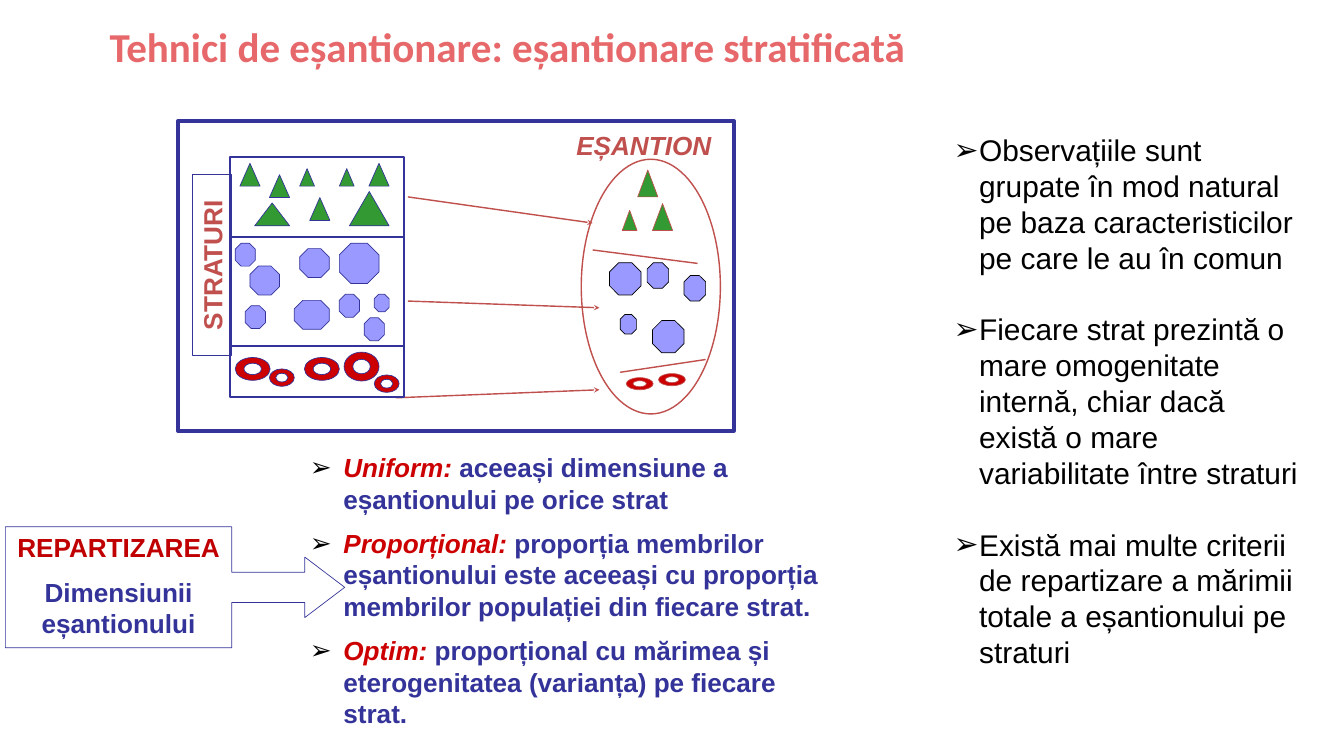
from lxml.etree import SubElement
from pptx import Presentation
from pptx.dml.color import RGBColor
from pptx.enum.shapes import MSO_CONNECTOR as Link, MSO_SHAPE as Kind
from pptx.enum.text import MSO_ANCHOR as Anchor, MSO_AUTO_SIZE as Auto, PP_ALIGN as Align
from pptx.oxml.ns import qn
from pptx.util import Inches, Pt

NAVY = RGBColor(0x33, 0x33, 0x99)
BRICK = RGBColor(0xC0, 0x50, 0x4D)
RED = RGBColor(0xCC, 0x00, 0x00)
DARK = RGBColor(0xC0, 0x00, 0x00)
GREEN = RGBColor(0x33, 0x99, 0x33)
LILAC = RGBColor(0x99, 0x99, 0xFF)
CORAL = RGBColor(0xE7, 0x68, 0x6A)
BLACK = RGBColor(0, 0, 0)

WIDE = (0.15, 0.07)  # side and top margins of the roomy text boxes
SLIM = (0.1, 0.05)
BEND = 0.55  # control length of a quarter arc

# Members of each stratum: left, top, width, height
TREES = [(3.57, 2.43, 0.3, 0.34), (4.01, 2.6, 0.3, 0.34), (3.79, 3.02, 0.52, 0.34),
         (5.49, 2.43, 0.3, 0.34), (4.61, 2.94, 0.3, 0.34), (4.46, 2.51, 0.22, 0.26),
         (5.2, 2.85, 0.59, 0.51), (5.05, 2.51, 0.22, 0.26)]
BLOCKS = [(3.72, 3.96, 0.44, 0.43), (4.38, 4.47, 0.52, 0.43), (4.46, 3.7, 0.44, 0.43),
          (5.42, 4.73, 0.3, 0.34), (5.05, 4.38, 0.3, 0.34), (5.57, 4.38, 0.22, 0.26),
          (5.05, 3.62, 0.59, 0.6), (3.5, 3.62, 0.3, 0.34), (3.65, 4.55, 0.3, 0.34)]
RINGS = [(3.5, 5.32, 0.52, 0.34), (4.01, 5.49, 0.37, 0.26), (5.57, 5.58, 0.37, 0.26),
         (4.53, 5.32, 0.52, 0.34), (5.12, 5.24, 0.52, 0.43)]

# Members drawn into the sample
PICKED_TREES = [(9.71, 3.03, 0.3, 0.4), (9.26, 3.13, 0.22, 0.3), (9.49, 2.53, 0.3, 0.4)]
PICKED_BLOCKS = [(9.07, 3.91, 0.47, 0.48), (9.63, 3.91, 0.32, 0.38), (9.23, 4.68, 0.24, 0.29),
                 (10.18, 4.1, 0.32, 0.38), (9.71, 4.77, 0.47, 0.48)]
PICKED_RINGS = [(9.32, 5.62, 0.4, 0.18), (9.8, 5.56, 0.4, 0.18)]

METHODS = [
    ("Uniform: ", "aceeași dimensiune a eșantionului pe orice strat"),
    ("Proporțional: ", "proporția membrilor eșantionului este aceeași cu proporția "
                       "membrilor populației din fiecare strat."),
    ("Optim: ", "proporțional cu mărimea și eterogenitatea (varianța) pe fiecare strat."),
]
NOTES = [
    "Observațiile sunt grupate în mod natural pe baza caracteristicilor pe care le au în comun",
    "Fiecare strat prezintă o mare omogenitate internă, chiar dacă există o mare "
    "variabilitate între straturi",
    "Există mai multe criterii de repartizare a mărimii totale a eșantionului pe straturi",
]


def paint(shape, fill, line, width):
    shape.shadow.inherit = False
    if fill is None:
        shape.fill.background()
    else:
        shape.fill.solid()
        shape.fill.fore_color.rgb = fill
    shape.line.color.rgb = line
    shape.line.width = Pt(width)
    return shape


def add_form(slide, kind, box, fill, line, width=0.75):
    shape = slide.shapes.add_shape(kind, *map(Inches, box))
    return paint(shape, fill, line, width)


def curve(shape):
    """Turn each three straight segments into one Bezier arc."""
    steps = list(shape._element.iter(qn("a:lnTo")))
    for arc, *rest in zip(steps[::3], steps[1::3], steps[2::3]):
        bend = arc.makeelement(qn("a:cubicBezTo"))
        arc.addprevious(bend)
        for step in (arc, *rest):
            bend.append(step[0])
            step.getparent().remove(step)


def add_ring(slide, box, line):
    """Oval ring whose hole is half as wide and half as high."""
    left, top, width, height = box

    def oval(part):
        spots = [(-1, 0)]
        for x, y in ((-1, 0), (0, -1), (1, 0), (0, 1)):
            spots += [(x - BEND * y, y + BEND * x), (BEND * x - y, BEND * y + x), (-y, x)]
        return [(Inches(left + width / 2 * (1 + part * x)),
                 Inches(top + height / 2 * (1 + part * y))) for x, y in spots]

    outer, inner = oval(1), oval(0.5)[::-1]
    build = slide.shapes.build_freeform(*outer[0])
    build.add_line_segments(outer[1:], close=True)
    build.move_to(*inner[0])
    build.add_line_segments(inner[1:], close=True)
    ring = paint(build.convert_to_shape(), RED, line, 0.75)
    curve(ring)


def add_line(slide, ends, color, width, arrow=False):
    line = slide.shapes.add_connector(Link.STRAIGHT, *map(Inches, ends))
    line.line.color.rgb = color
    line.line.width = Pt(width)
    if arrow:
        SubElement(line.line._get_or_add_ln(), qn("a:tailEnd"), type="stealth")
    SubElement(line._element.spPr, qn("a:effectLst"))


def set_frame(shape, pad):
    frame = shape.text_frame
    frame.word_wrap = True
    frame.auto_size = Auto.NONE
    frame.vertical_anchor = Anchor.TOP
    frame.margin_left = frame.margin_right = Inches(pad[0])
    frame.margin_top = frame.margin_bottom = Inches(pad[1])
    return frame


def add_para(frame, first, gap=0, align=Align.LEFT):
    para = frame.paragraphs[0] if first else frame.add_paragraph()
    para.alignment = align
    para.space_before = Pt(0 if first else gap)
    return para


def set_font(font, size, color, bold=True, italic=False, name="Arial"):
    font.name, font.size, font.bold, font.italic = name, Pt(size), bold, italic
    font.color.rgb = color


def add_mark(para, indent):
    props = para._p.get_or_add_pPr()
    props.set("marL", str(Inches(indent)))
    props.set("indent", str(-Inches(indent)))
    SubElement(SubElement(props, qn("a:buClr")), qn("a:srgbClr"), val=str(BLACK))
    SubElement(props, qn("a:buFont"), typeface="Arial")
    SubElement(props, qn("a:buChar"), char="➢")


def add_label(shape, pad, lines, italic=False):
    frame = set_frame(shape, pad)
    for i, (text, color) in enumerate(lines):
        para = add_para(frame, i == 0, 14, Align.CENTER)
        para.text = text
        set_font(para.font, 28, color, italic=italic)


def place(shape, box):
    shape.left, shape.top, shape.width, shape.height = map(Inches, box)


def fill_title(slide):
    title = slide.shapes.title
    place(title, (1.53, 0.27, 13.92, 0.84))
    para = add_para(set_frame(title, SLIM), True)
    para.text = "Tehnici de eșantionare: eșantionare stratificată"
    set_font(para.font, 44, CORAL, name="Calibri")


def fill_notes(slide):
    body = slide.placeholders[1]
    place(body, (14.09, 1.91, 5.42, 8.18))
    frame = set_frame(body, SLIM)
    for i, text in enumerate(NOTES):
        para = add_para(frame, i == 0, 38.5)
        para.text = text
        add_mark(para, 0.38)
        set_font(para.font, 32, BLACK, bold=False)


def add_methods(slide):
    box = slide.shapes.add_textbox(*map(Inches, (4.46, 6.65, 8.01, 4.39)))
    frame = set_frame(box, WIDE)
    for i, (name, text) in enumerate(METHODS):
        para = add_para(frame, i == 0, 14)
        add_mark(para, 0.5)
        for part, color, italic in ((name, RED, True), (text, NAVY, False)):
            run = para.add_run()
            run.text = part
            set_font(run.font, 28, color, italic=italic)


def add_group(slide, trees, blocks, rings, line, edge):
    for box in trees:
        add_form(slide, Kind.ISOSCELES_TRIANGLE, box, GREEN, line)
    for box in blocks:
        add_form(slide, Kind.OCTAGON, box, LILAC, edge)
    for box in rings:
        add_ring(slide, box, line)


def main():
    deck = Presentation()
    deck.slide_width, deck.slide_height = Inches(20), Inches(11.25)
    slide = deck.slides.add_slide(deck.slide_layouts[1])
    fill_title(slide)
    fill_notes(slide)

    # Allocation callout and its methods
    call = add_form(slide, Kind.RIGHT_ARROW_CALLOUT, (0.08, 7.84, 5.05, 1.8), None, NAVY)
    for i, value in enumerate((0.25, 0.25, 0.33, 0.667)):
        call.adjustments[i] = value
    add_label(call, WIDE, [("REPARTIZAREA", DARK), ("Dimensiunii eșantionului", NAVY)])
    add_methods(slide)

    # Sample
    for ends in ((8.82, 3.72, 10.38, 3.92), (9.23, 5.54, 10.5, 5.35)):
        add_line(slide, ends, BRICK, 1.5)
    add_group(slide, PICKED_TREES, PICKED_BLOCKS, PICKED_RINGS, BRICK, BLACK)
    add_form(slide, Kind.OVAL, (8.65, 2.37, 2.07, 3.79), None, BRICK, 1.5)
    head = slide.shapes.add_textbox(*map(Inches, (8.25, 1.85, 2.66, 1.33)))
    add_label(head, WIDE, [("EȘANTION", BRICK)], italic=True)

    # Draws from each stratum
    for ends in ((6.07, 2.93, 8.82, 3.32), (6.07, 4.48, 8.92, 4.58), (5.89, 5.92, 8.92, 5.8)):
        add_line(slide, ends, BRICK, 1.5, arrow=True)

    # Strata
    add_form(slide, Kind.RECTANGLE, (3.42, 2.34, 2.59, 3.57), None, NAVY, 2)
    for y in (3.53, 5.15):
        add_line(slide, (3.42, y, 6.01, y), NAVY, 2)
    add_group(slide, TREES, BLOCKS, RINGS, NAVY, NAVY)
    side = add_form(slide, Kind.RECTANGLE, (1.81, 3.66, 2.69, 0.57), None, NAVY)
    side.rotation = 270
    add_label(side, SLIM, [("STRATURI", BRICK)])

    # Frame of the diagram
    add_form(slide, Kind.RECTANGLE, (2.65, 1.8, 8.27, 4.61), None, NAVY, 4.5)
    deck.save("out.pptx")


if __name__ == "__main__":
    main()
